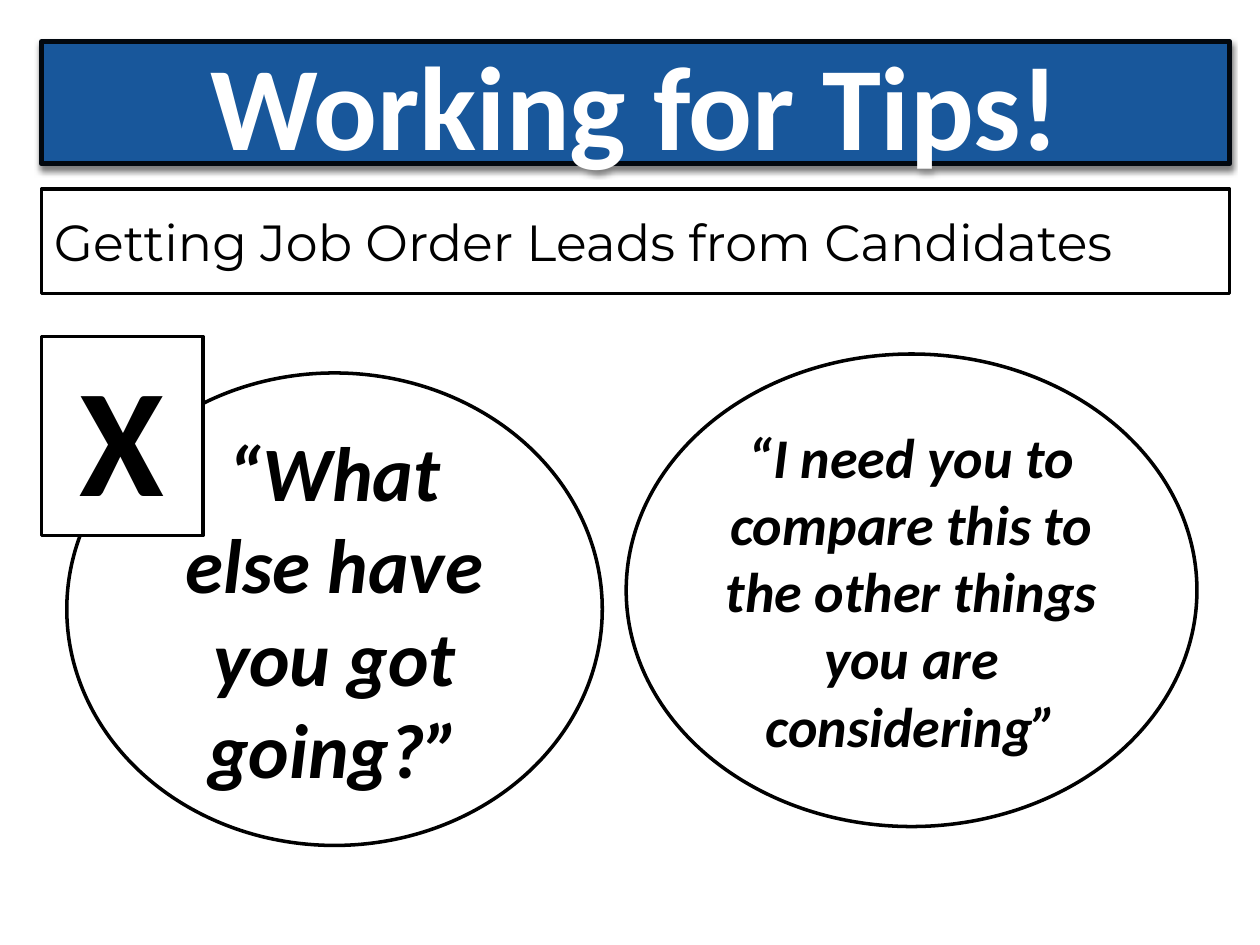
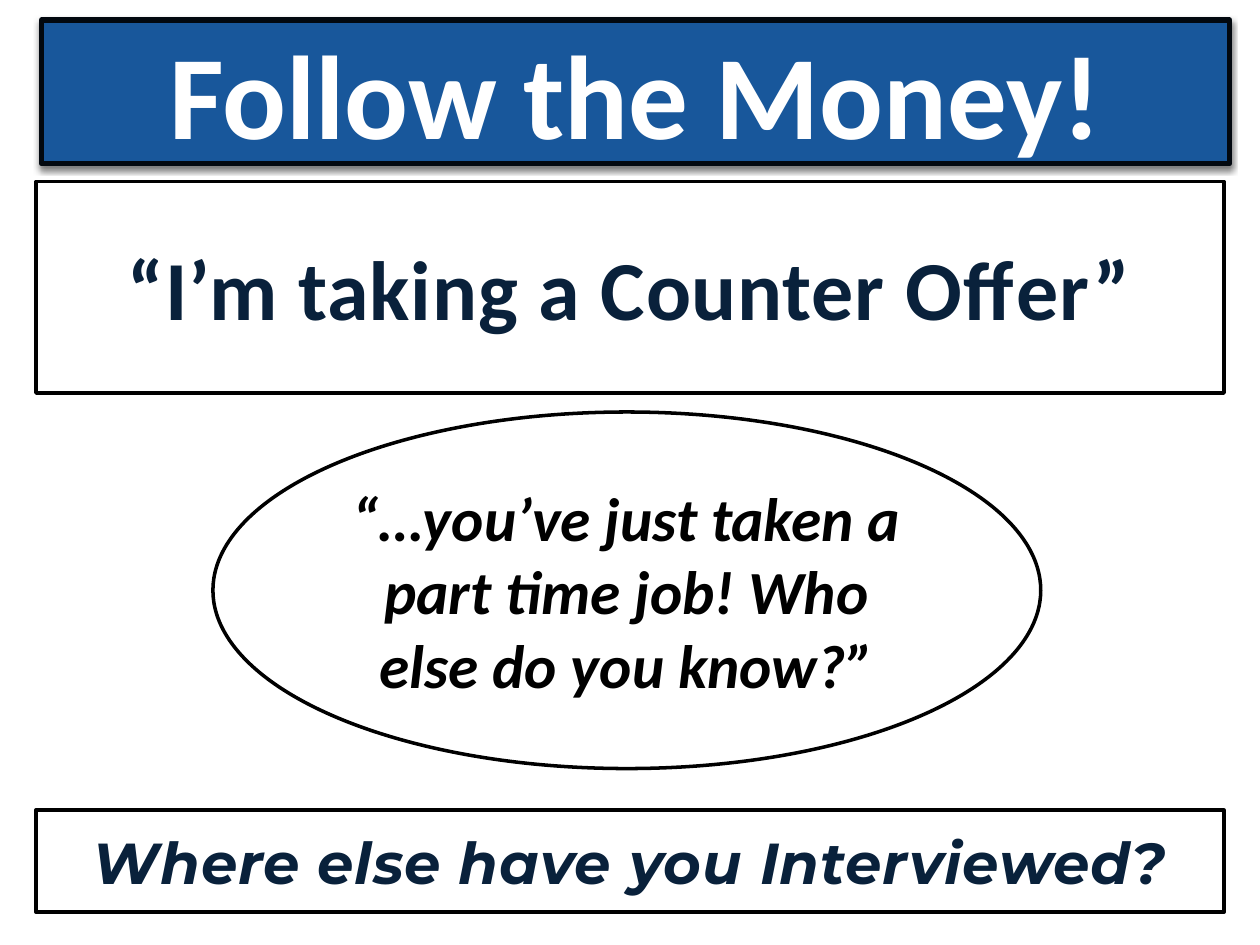
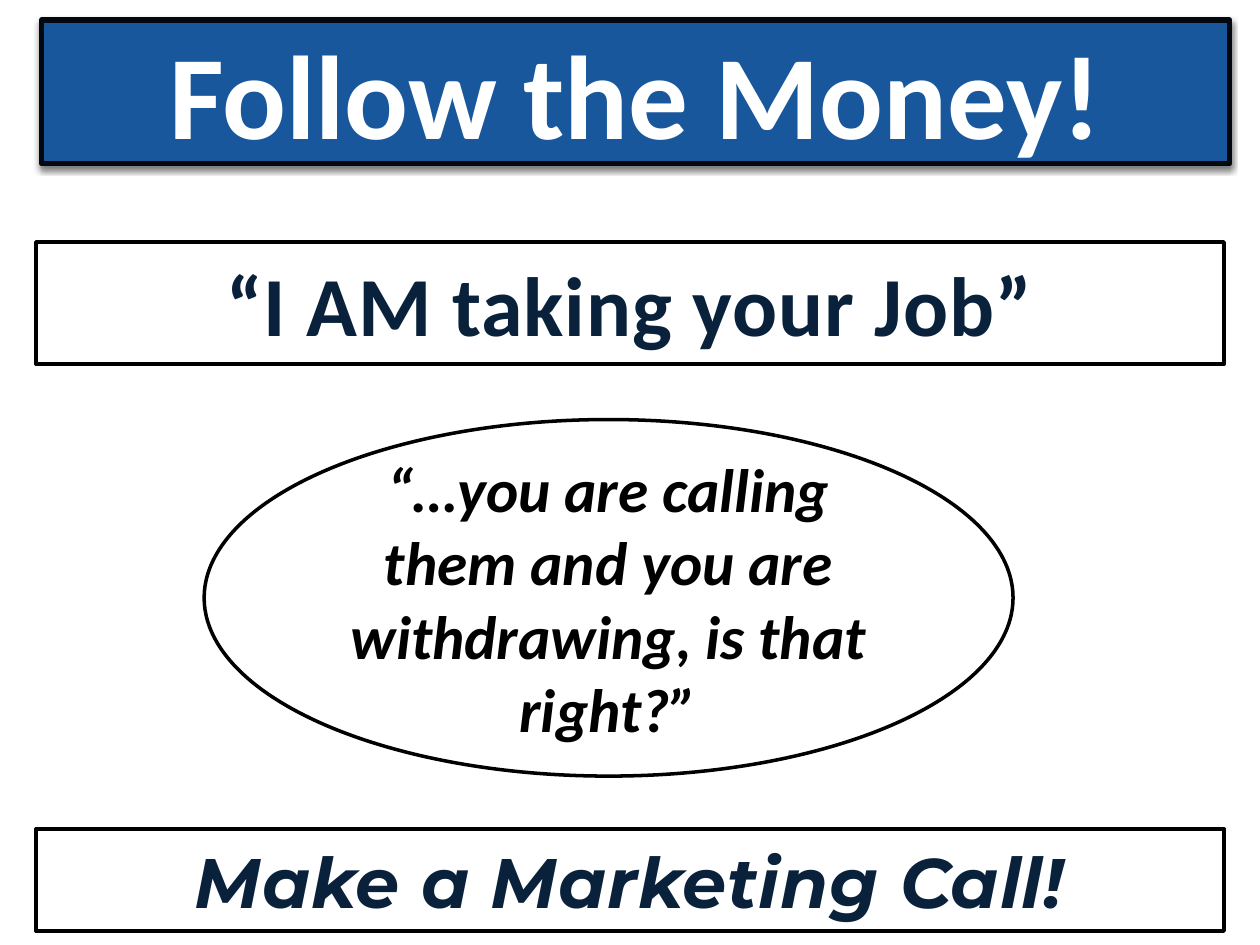
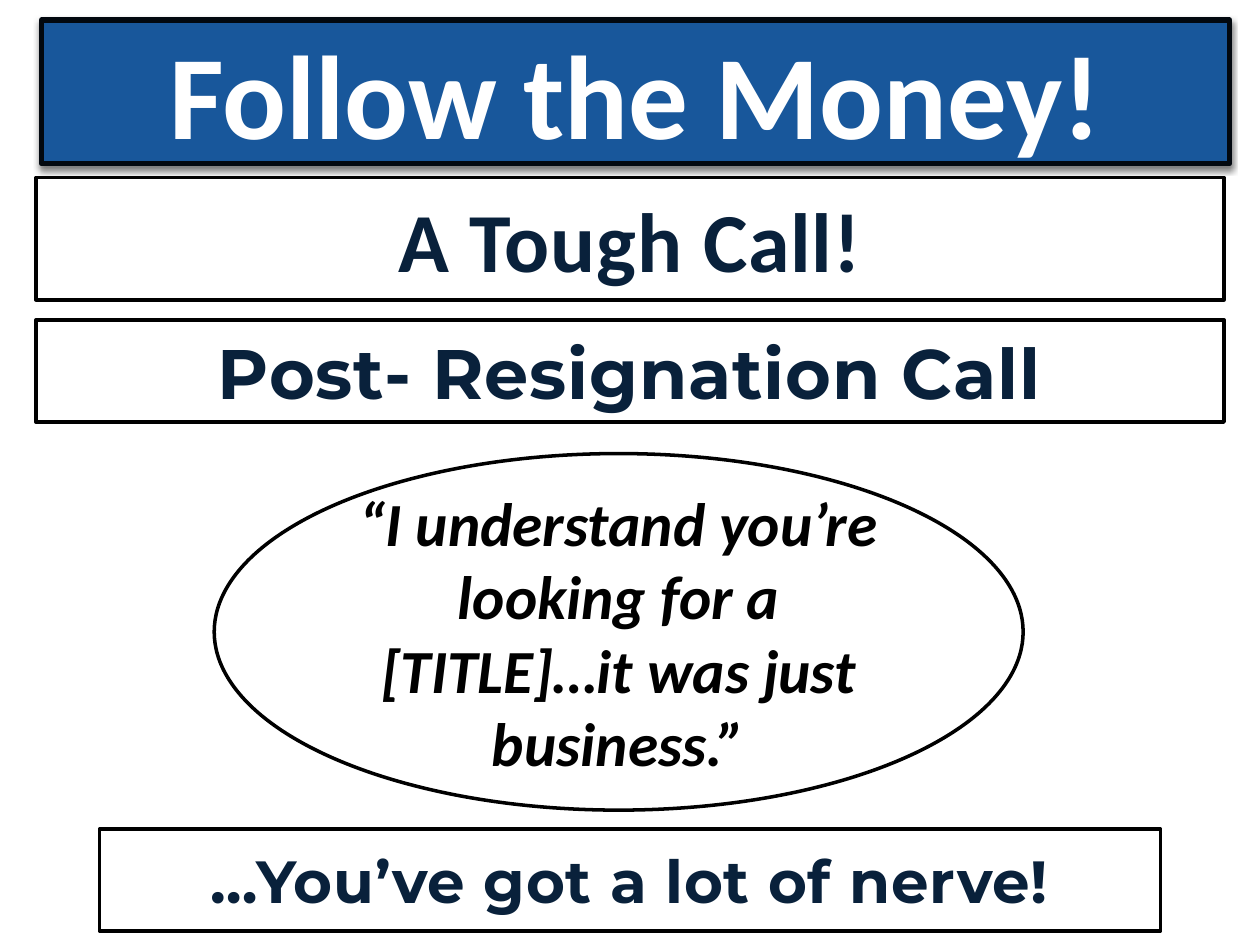
"""Build four recruiting-call slides: a blue band, boxed statements and quotes in ovals."""
import dataclasses

import lxml.etree
import pptx
import pptx.dml.color
import pptx.enum.shapes
import pptx.enum.text
import pptx.oxml.ns
import pptx.util

Inches, Pt = pptx.util.Inches, pptx.util.Pt
RGBColor = pptx.dml.color.RGBColor
Shape = pptx.enum.shapes.MSO_SHAPE
Anchor = pptx.enum.text.MSO_ANCHOR
Align = pptx.enum.text.PP_ALIGN
AutoSize = pptx.enum.text.MSO_AUTO_SIZE

WHITE = RGBColor(0xFF, 0xFF, 0xFF)
BLACK = RGBColor(0x00, 0x00, 0x00)
BLUE = RGBColor(0x18, 0x57, 0x9B)
NAVY = RGBColor(0x09, 0x21, 0x3B)
EDGE = RGBColor(0x02, 0x08, 0x0F)

SLIDE_WIDTH, SLIDE_HEIGHT = 10, 7.5
FULL = 9.43
MARGIN = 0.33
BAND_BOTTOM = 1.3
STRIP = 0.81
HEADLINE = 0.97
OVAL = 2.83
LAST_TOP = 6.58
CENTRED = None


@dataclasses.dataclass
class Style:
    font: str = "Calibri"
    colour: RGBColor = BLACK
    fill: RGBColor = WHITE
    edge: RGBColor = BLACK
    line: float = 2
    bold: bool = True
    italic: bool = False
    align: Align = Align.CENTER
    anchor: Anchor = Anchor.MIDDLE
    fit: AutoSize = AutoSize.NONE
    geometry: Shape = Shape.RECTANGLE
    spacing: float = 0
    indent: float = 0
    shadow: bool = False


BAND = Style(colour=WHITE, fill=BLUE, edge=EDGE, line=3, shadow=True)
STATEMENT = Style(colour=NAVY, spacing=0.5)
STRIP_PLAIN = Style(font="Montserrat", colour=NAVY, spacing=0.5)
STRIP_ITALIC = dataclasses.replace(STRIP_PLAIN, italic=True)
QUOTE = Style(italic=True, geometry=Shape.OVAL, indent=-0.5)
SUBTITLE = Style(font="Montserrat", bold=False, align=Align.LEFT)
MARK = Style(anchor=Anchor.TOP, fit=AutoSize.SHAPE_TO_FIT_TEXT)


def band(text, top):
    return BAND, text, 68, (MARGIN, top, FULL, BAND_BOTTOM - top)


MONEY_BAND = band("Follow the Money!", 0.16)

SLIDES = [
    {"title": "Working for Tips!", "parts": [
        (QUOTE, "“What else have you got going?”", 44, (0.53, 2.96, 4.25, 3.75)),
        (SUBTITLE, "Getting Job Order Leads from Candidates", 29, (MARGIN, 1.5, FULL, 0.83)),
        (QUOTE, "“I need you to compare this to the other things you are considering”", 32,
         (4.97, 2.81, 4.53, 3.75)),
        (MARK, "X", 88, (MARGIN, 2.67, 1.28, 1.58)),
        band("Working for Tips!", 0.33),
    ]},
    {"title": "“I’m taking a Counter Offer”", "parts": [
        (STATEMENT, "“I’m taking a Counter Offer”", 48, (CENTRED, 1.44, FULL, 1.68)),
        (QUOTE, "“…you’ve just taken a part time job! Who else do you know?”", 35,
         (1.69, 3.27, 6.57, OVAL)),
        (STRIP_ITALIC, "Where else have you Interviewed?", 33, (CENTRED, 6.43, FULL, STRIP)),
        MONEY_BAND,
    ]},
    {"title": "“I AM taking your Job”", "parts": [
        (STATEMENT, "“I AM taking your Job”", 48, (CENTRED, 1.92, FULL, HEADLINE)),
        (QUOTE, "“…you are calling them and you are withdrawing, is that right?”", 35,
         (1.62, 3.33, 6.42, OVAL)),
        (STRIP_ITALIC, "Make a Marketing Call!", 40, (CENTRED, LAST_TOP, FULL, STRIP)),
        MONEY_BAND,
    ]},
    {"title": "A Tough Call!", "parts": [
        (STATEMENT, "A Tough Call!", 48, (CENTRED, 1.41, FULL, HEADLINE)),
        (QUOTE, "“I understand you’re looking for a [TITLE]…it was just business.”", 35,
         (1.7, 3.6, 6.42, OVAL)),
        (STRIP_PLAIN, "Post- Resignation Call", 40, (CENTRED, 2.54, FULL, STRIP)),
        (STRIP_PLAIN, "…You’ve got a lot of nerve!", 34, (CENTRED, LAST_TOP, 8.42, STRIP)),
        MONEY_BAND,
    ]},
]


def add_shadow(shape):
    qn = pptx.oxml.ns.qn
    properties = shape.element.spPr
    for effects in properties.findall(qn("a:effectLst")):
        properties.remove(effects)
    effects = lxml.etree.SubElement(properties, qn("a:effectLst"))
    outer = lxml.etree.SubElement(effects, qn("a:outerShdw"), blurRad=str(Pt(3)),
                                  dist=str(Pt(2)), dir="5400000", rotWithShape="0")
    colour = lxml.etree.SubElement(outer, qn("a:srgbClr"), val=str(BLACK))
    lxml.etree.SubElement(colour, qn("a:alpha"), val="50000")


def write_text(shape, style, text, size):
    frame = shape.text_frame
    frame.text = text
    frame.word_wrap = True
    frame.auto_size = style.fit
    frame.vertical_anchor = style.anchor
    paragraph = frame.paragraphs[0]
    paragraph.alignment = style.align
    if style.indent:
        properties = paragraph._p.get_or_add_pPr()
        properties.set("marL", "0")
        properties.set("indent", str(Inches(style.indent)))
    font = paragraph.runs[0].font
    font.name, font.size = style.font, Pt(size)
    font.bold, font.italic = style.bold, style.italic
    font.color.rgb = style.colour
    if style.spacing:
        font._element.set("spc", str(int(style.spacing * 100)))


def add_part(slide, title, style, text, size, box):
    left, top, width, height = box
    if left is CENTRED:
        left = (SLIDE_WIDTH - width) / 2
    place = [Inches(length) for length in (left, top, width, height)]
    if text == title:
        shape = slide.shapes.title
        shape.left, shape.top, shape.width, shape.height = place
        shape.element.getparent().append(shape.element)
    else:
        shape = slide.shapes.add_shape(style.geometry, *place)
        shape.shadow.inherit = False
    shape.fill.solid()
    shape.fill.fore_color.rgb = style.fill
    shape.line.color.rgb = style.edge
    shape.line.width = Pt(style.line)
    if style.shadow:
        add_shadow(shape)
    write_text(shape, style, text, size)


def main():
    presentation = pptx.Presentation()
    presentation.slide_width = Inches(SLIDE_WIDTH)
    presentation.slide_height = Inches(SLIDE_HEIGHT)
    title_only = presentation.slide_layouts[5]
    for content in SLIDES:
        slide = presentation.slides.add_slide(title_only)
        for part in content["parts"]:
            add_part(slide, content["title"], *part)
    presentation.save("out.pptx")


if __name__ == "__main__":
    main()
